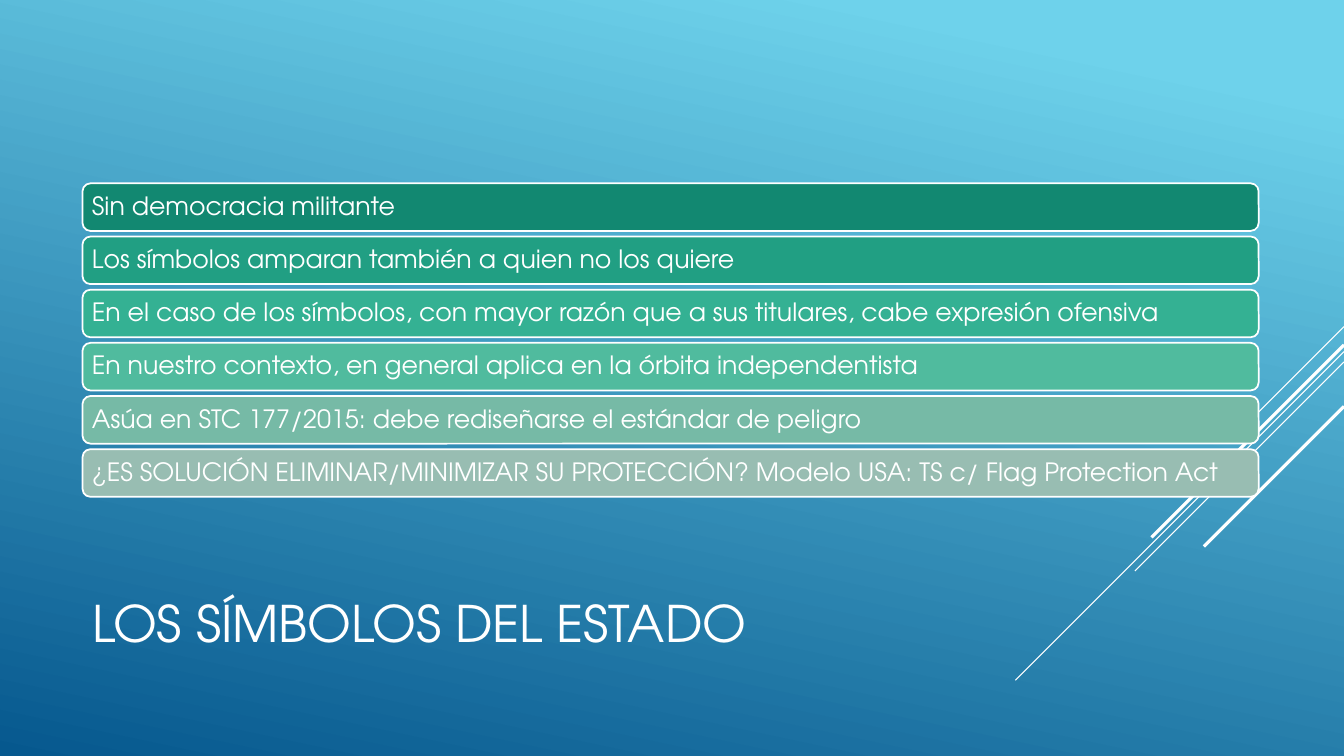
import pptx
import pptx.dml.color
import pptx.enum.shapes
import pptx.enum.text
import pptx.oxml.ns
import pptx.util
from lxml import etree

Cm = pptx.util.Cm
Pt = pptx.util.Pt
WIDTH = 33.87
LEFT = 2.08


def rgb(value):
    return pptx.dml.color.RGBColor.from_string(value)


def write(tf, text, size):
    """Fill a text frame with one left-aligned, vertically centred white line."""
    tf.word_wrap = True
    tf.vertical_anchor = pptx.enum.text.MSO_ANCHOR.MIDDLE
    p = tf.paragraphs[0]
    p.alignment = pptx.enum.text.PP_ALIGN.LEFT
    p.line_spacing = 0.9
    r = p.add_run()
    r.text = text
    r.font.name = "TeX Gyre Adventor"
    r.font.size = Pt(size)
    r.font.color.rgb = rgb("FFFFFF")


prs = pptx.Presentation()
prs.slide_width = Cm(WIDTH)
prs.slide_height = Cm(19.05)
s = prs.slides.add_slide(prs.slide_layouts[6])

# Background gradient
fill = s.background.fill
fill.gradient()
fill.gradient_angle = 258
for stop, (position, color) in zip(fill.gradient_stops, [(0.1, "6ED2EB"), (1, "06588E")]):
    stop.position = position
    stop.color.rgb = rgb(color)

# Diagonal lines at 45 degrees from the right edge: start height, run, weight
diagonals = [
    (8.23, 2.54, 0.75),
    (8.86, 8.28, 0.75),
    (9.12, 5.27, 0.75),
    (8.69, 4.85, 2.25),
    (10.24, 3.53, 2.25),
]
for top, run, weight in diagonals:
    line = s.shapes.add_connector(
        pptx.enum.shapes.MSO_CONNECTOR.STRAIGHT,
        Cm(WIDTH), Cm(top), Cm(WIDTH - run), Cm(top + run))
    line.line.color.rgb = rgb("FFFFFF")
    line.line.width = Pt(weight)
    etree.SubElement(line._element.spPr, pptx.oxml.ns.qn("a:effectLst"))

# Title, set low in its box
title = s.shapes.add_textbox(Cm(LEFT), Cm(12.88), Cm(23.7), Cm(4.19))
title.text_frame.margin_top = Cm(1.73)
write(title.text_frame, "LOS SÍMBOLOS DEL ESTADO", 36)

# Stacked bars
bars = [
    ("Sin democracia militante", "128871"),
    ("Los símbolos amparan también a quien no los quiere", "219F83"),
    ("En el caso de los símbolos, con mayor razón que a sus titulares, cabe expresión ofensiva", "34B193"),
    ("En nuestro contexto, en general aplica en la órbita independentista", "50BB9E"),
    ("Asúa en STC 177/2015: debe rediseñarse el estándar de peligro", "76BAA6"),
    ("¿ES SOLUCIÓN ELIMINAR/MINIMIZAR SU PROTECCIÓN? Modelo USA: TS c/ Flag Protection Act", "98BDB2"),
]
for i, (text, color) in enumerate(bars):
    sp = s.shapes.add_shape(
        pptx.enum.shapes.MSO_SHAPE.ROUNDED_RECTANGLE,
        Cm(LEFT), Cm(4.62 + 1.34 * i), Cm(29.64), Cm(1.2))
    sp.shadow.inherit = False
    sp.fill.solid()
    sp.fill.fore_color.rgb = rgb(color)
    sp.line.color.rgb = rgb("FFFFFF")
    sp.line.width = Pt(1.25)
    tf = sp.text_frame
    tf.margin_left = tf.margin_right = tf.margin_top = tf.margin_bottom = Cm(0.18)
    write(tf, text, 18)

prs.save("out.pptx")
